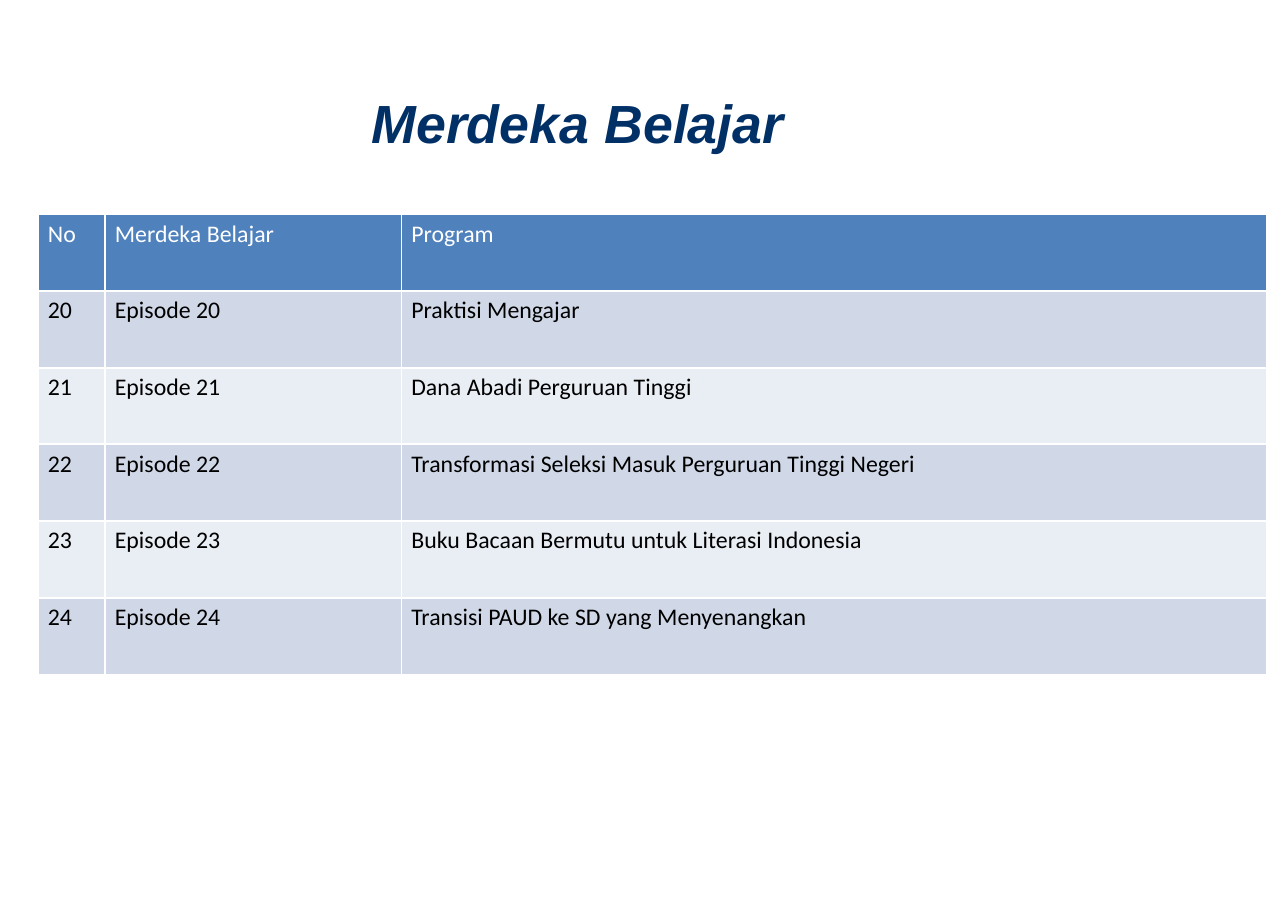
import lxml.etree
import pptx
import pptx.dml.color
import pptx.enum.text
import pptx.oxml.ns
import pptx.util
from pptx.util import Cm

COLORS = {
    "title": "013066",
    "header": "4F81BD",
    "band_dark": "D0D8E8",
    "band_light": "E9EDF4",
    "header_text": "FFFFFF",
    "body_text": "000000",
    "border": "FFFFFF",
}
HEADINGS = ["No", "Merdeka Belajar", "Program"]
FIRST_EPISODE = 20
PROGRAMS = [
    "Praktisi Mengajar",
    "Dana Abadi Perguruan Tinggi",
    "Transformasi Seleksi Masuk Perguruan Tinggi Negeri",
    "Buku Bacaan Bermutu untuk Literasi Indonesia",
    "Transisi PAUD ke SD yang Menyenangkan",
]
COLUMN_WIDTHS = [Cm(1.09), Cm(4.83), Cm(14.1)]
ROW_HEIGHT = Cm(1.25)


def rgb(name):
    return pptx.dml.color.RGBColor.from_string(COLORS[name])


class SlideBuilder:
    """Holds the current slide and the style shared by its elements."""

    title_font = "Arial"
    table_font = "Calibri"
    table_size = 11
    border_width = 1

    def __init__(self, slide):
        self.slide = slide

    def format_runs(self, paragraph, font, size, color, emphasis=False):
        for run in paragraph.runs:
            run.font.name = font
            run.font.size = pptx.util.Pt(size)
            run.font.bold = run.font.italic = emphasis
            run.font.color.rgb = rgb(color)

    def add_title(self, text, left, top, width, height):
        title = self.slide.shapes.title
        title.left, title.top, title.width, title.height = left, top, width, height
        frame = title.text_frame
        frame.text = text
        frame.margin_left = frame.margin_right = 0
        frame.margin_top = frame.margin_bottom = 0
        frame.vertical_anchor = pptx.enum.text.MSO_ANCHOR.TOP
        frame.auto_size = pptx.enum.text.MSO_AUTO_SIZE.NONE
        paragraph = frame.paragraphs[0]
        paragraph.alignment = pptx.enum.text.PP_ALIGN.LEFT
        self.format_runs(paragraph, self.title_font, 24.8, "title", emphasis=True)

    def add_borders(self, cell):
        qn = pptx.oxml.ns.qn
        properties = cell._tc.get_or_add_tcPr()
        for side in ("lnL", "lnR", "lnT", "lnB"):
            line = lxml.etree.SubElement(
                properties, qn(f"a:{side}"), w=str(pptx.util.Pt(self.border_width))
            )
            fill = lxml.etree.SubElement(line, qn("a:solidFill"))
            lxml.etree.SubElement(fill, qn("a:srgbClr"), val=COLORS["border"])

    def fill_cell(self, cell, text, fill, color):
        cell.text_frame.text = text
        cell.margin_left = cell.margin_right = Cm(0.16)
        cell.margin_top = cell.margin_bottom = Cm(0.08)
        self.add_borders(cell)
        cell.fill.solid()
        cell.fill.fore_color.rgb = rgb(fill)
        self.format_runs(
            cell.text_frame.paragraphs[0], self.table_font, self.table_size, color
        )

    def add_table(self, rows, left, top, column_widths, row_height):
        table = self.slide.shapes.add_table(
            len(rows), len(column_widths), left, top,
            sum(column_widths), row_height * len(rows),
        ).table
        for column, width in zip(table.columns, column_widths):
            column.width = width
        for index, texts in enumerate(rows):
            table.rows[index].height = row_height
            if index == 0:
                fill, color = "header", "header_text"
            else:
                fill = "band_dark" if index % 2 else "band_light"
                color = "body_text"
            for cell, text in zip(table.rows[index].cells, texts):
                self.fill_cell(cell, text, fill, color)


def main():
    presentation = pptx.Presentation()
    presentation.slide_width = Cm(20.98)
    presentation.slide_height = Cm(14.81)
    title_only = presentation.slide_layouts[5]
    builder = SlideBuilder(presentation.slides.add_slide(title_only))

    builder.add_title("Merdeka Belajar", Cm(6.05), Cm(1.47), Cm(12.42), Cm(1.07))
    episodes = [
        [str(number), f"Episode {number}", program]
        for number, program in enumerate(PROGRAMS, FIRST_EPISODE)
    ]
    builder.add_table(
        [HEADINGS] + episodes, Cm(0.62), Cm(3.49), COLUMN_WIDTHS, ROW_HEIGHT
    )
    presentation.save("out.pptx")


if __name__ == "__main__":
    main()
